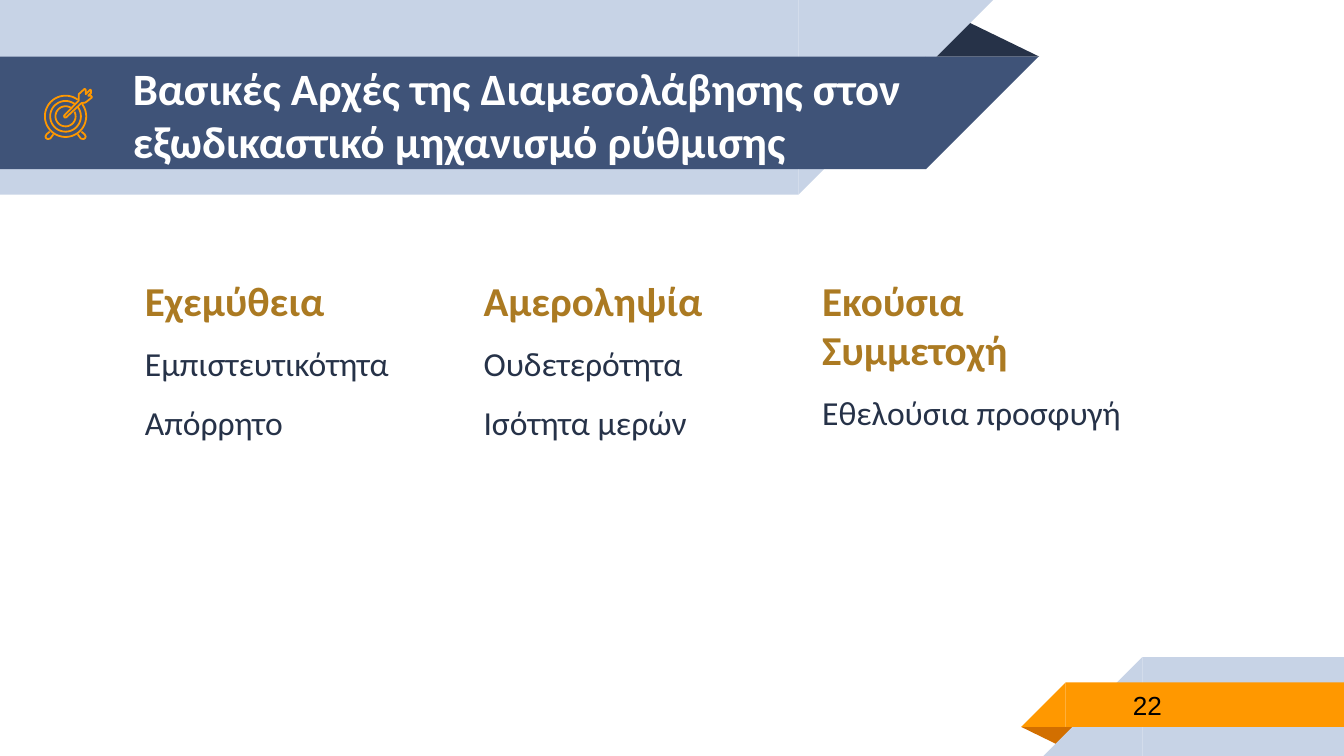
from math import cos, radians, sin

from pptx import Presentation
from pptx.dml.color import RGBColor
from pptx.enum.shapes import MSO_SHAPE as Preset
from pptx.enum.text import MSO_ANCHOR as Anchor
from pptx.util import Cm, Pt

COLORS = {
    "pale": "C7D3E6", "navy": "3F5378", "ink": "263248", "orange": "FF9800",
    "rust": "D26F00", "gold": "AB7A22", "white": "FFFFFF", "black": "000000",
}
TITLE = {"size": Pt(24), "name": "Calibri", "bold": True}
HEADING = {"size": Pt(22), "name": "Calibri", "bold": True}
BODY = {"size": Pt(18), "name": "Calibri", "bold": False}
NUMBER = {"size": Pt(14), "name": "Arial", "bold": False}

deck = Presentation()
deck.slide_width, deck.slide_height = Cm(25.4), Cm(14.29)
page = deck.slides.add_slide(deck.slide_layouts[6])


def add_text(bounds, lines, anchor=Anchor.TOP, space_after=0):
    """Add a text box; each line is (text, format values, colour name)."""
    frame = page.shapes.add_textbox(*map(Cm, bounds)).text_frame
    layout = {"word_wrap": True, "vertical_anchor": anchor}
    layout.update({f"margin_{side}": Cm(0.25) for side in ("left", "right", "top", "bottom")})
    for key, value in layout.items():
        setattr(frame, key, value)
    for index, (text, style, color) in enumerate(lines):
        para = frame.add_paragraph() if index else frame.paragraphs[0]
        para.space_after = Pt(space_after)
        span = para.add_run()
        span.text = text
        for key, value in style.items():
            setattr(span.font, key, value)
        span.font.color.rgb = RGBColor.from_string(COLORS[color])


def add_outline(points, close=False):
    """Draw an unfilled orange line through points measured from the target's centre."""
    spots = [(Cm(1.24 + x), Cm(2.2 + y)) for x, y in points]
    builder = page.shapes.build_freeform(*spots[0])
    builder.add_line_segments(spots[1:], close=close)
    shape = builder.convert_to_shape()
    shape.shadow.inherit = False
    shape.fill.background()
    shape.line.color.rgb = RGBColor.from_string(COLORS["orange"])
    shape.line.width = Pt(0.96)


# Ribbons at the top left and bottom right, from back to front
ribbons = [
    (Preset.ISOSCELES_TRIANGLE, (17.48, 0.36, 2.16, 0.71), 0, "ink"),
    (Preset.RECTANGLE, (0, 0, 15.09, 3.68), 0, "pale"),
    (Preset.RIGHT_TRIANGLE, (15.09, 0, 3.68, 3.68), 90, "pale"),
    (Preset.RECTANGLE, (0, 1.07, 17.5, 2.13), 0, "navy"),
    (Preset.RIGHT_TRIANGLE, (17.5, 1.07, 2.13, 2.13), 90, "navy"),
    (Preset.ISOSCELES_TRIANGLE, (19.3, 13.74, 1.09, 0.36), 180, "rust"),
    (Preset.RECTANGLE, (21.59, 12.42, 3.81, 1.87), 0, "pale"),
    (Preset.RIGHT_TRIANGLE, (19.72, 12.42, 1.87, 1.87), 270, "pale"),
    (Preset.RECTANGLE, (20.14, 12.9, 5.26, 0.84), 0, "orange"),
    (Preset.RIGHT_TRIANGLE, (19.3, 12.9, 0.84, 0.84), 270, "orange"),
]
for preset, bounds, turn, color in ribbons:
    ribbon = page.shapes.add_shape(preset, *map(Cm, bounds))
    ribbon.shadow.inherit = False
    ribbon.rotation = turn
    ribbon.fill.solid()
    ribbon.fill.fore_color.rgb = RGBColor.from_string(COLORS[color])
    ribbon.line.fill.background()
    if preset == Preset.ISOSCELES_TRIANGLE:
        ribbon.adjustments[0] = 0.324

# Title
add_text((2.26, 1.09, 16.84, 2.13),
         [("Βασικές Αρχές της Διαμεσολάβησης στον εξωδικαστικό μηχανισμό ρύθμισης",
           TITLE, "white")], Anchor.MIDDLE)

# Three columns of principles
columns = [
    ("Εχεμύθεια", "Εμπιστευτικότητα", "Απόρρητο"),
    ("Αμεροληψία", "Ουδετερότητα", "Ισότητα μερών"),
    ("Εκούσια Συμμετοχή", "Εθελούσια προσφυγή"),
]
for index, (heading, *items) in enumerate(columns):
    lines = [(heading, HEADING, "gold")] + [(item, BODY, "ink") for item in items]
    add_text((2.49 + 6.4 * index, 4.95, 6.25, 4.22), lines, space_after=10)

# Slide number
add_text((21.16, 12.88, 4.14, 0.89), [("22", NUMBER, "black")], Anchor.MIDDLE)

# Target icon: rings left open towards the upper right
for radius, start, end in [(0.39, 54, 396), (0.29, 54, 396), (0.19, 58, 387)]:
    angles = [radians(start + (end - start) * step / 60) for step in range(61)]
    add_outline([(radius * cos(angle), -radius * sin(angle)) for angle in angles])

# Target icon: mirrored feet
foot = [(0.3, 0.29), (0.36, 0.34), (0.38, 0.38), (0.37, 0.41),
        (0.34, 0.43), (0.29, 0.42), (0.23, 0.34)]
for side in (-1, 1):
    add_outline([(side * x, y) for x, y in foot])

# Target icon: arrow
add_outline([
    (0.48, -0.39), (0.43, -0.39), (0.48, -0.44), (0.48, -0.5), (0.46, -0.5),
    (0.38, -0.42), (0.38, -0.5), (0.36, -0.52), (0.25, -0.42), (0.25, -0.38),
    (0.25, -0.3), (-0.03, -0.01), (-0.02, 0.02), (0.01, 0.02), (0.3, -0.25),
    (0.37, -0.26), (0.4, -0.28), (0.5, -0.36),
], close=True)

deck.save("out.pptx")
